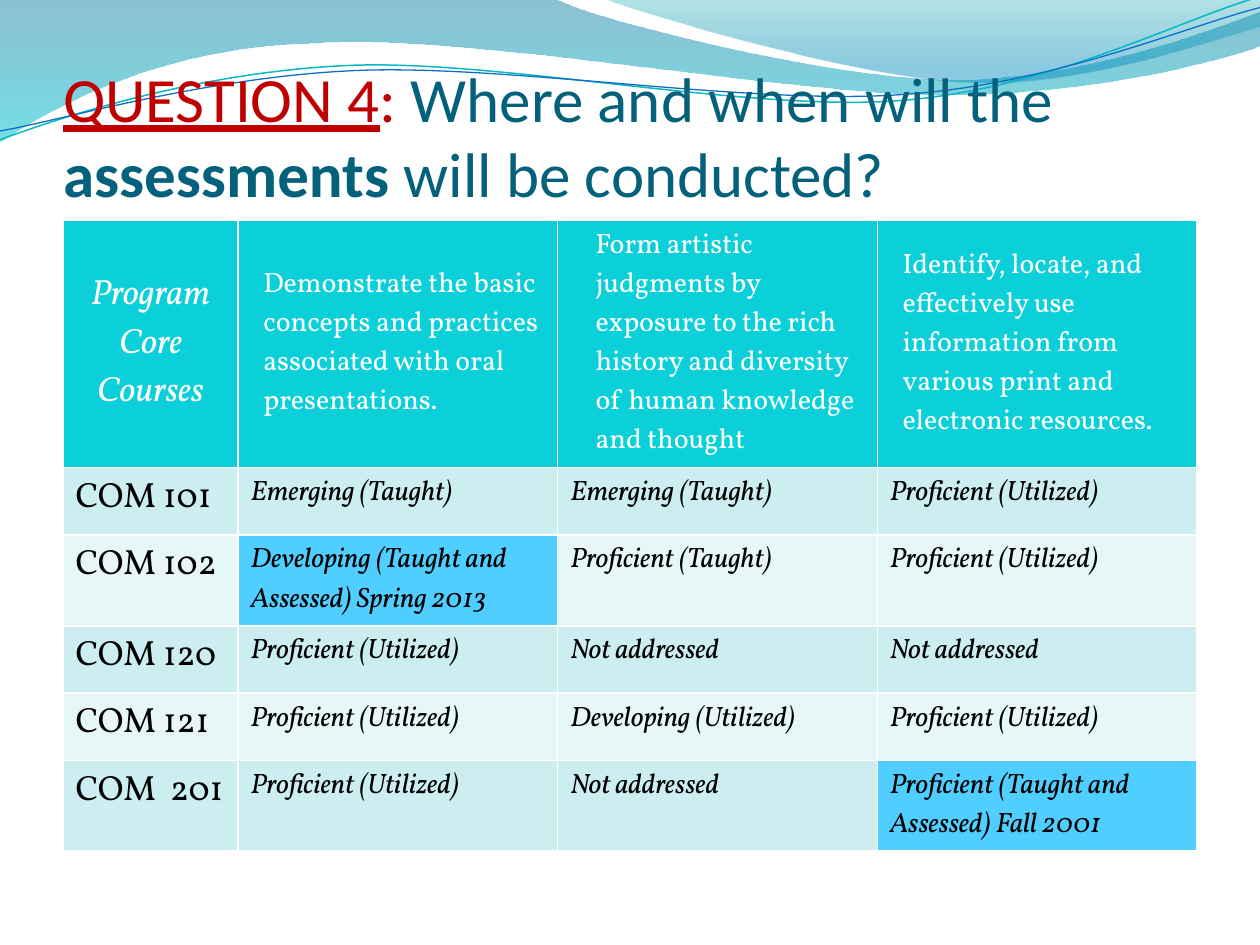
from lxml.etree import SubElement
from pptx import Presentation
from pptx.dml.color import RGBColor
from pptx.enum.text import MSO_ANCHOR, MSO_AUTO_SIZE, PP_ALIGN
from pptx.oxml.ns import qn
from pptx.util import Inches, Pt

COLORS = {
    "white": "FFFFFF", "black": "000000", "red": "C00000", "title": "04617B",
    "header": "0BD0D9", "odd": "CCEEF1", "even": "E7F7F8", "highlight": "4FCEFF",
    "wave_top": "0074A1", "wave_bottom": "00C6CF",
    "crest_top": "00A1A9", "crest_bottom": "008BBF",
    "teal_line": "0AB8BF", "blue_line": "0F6FC6",
}

TITLE_RUNS = [
    ("QUESTION 4", "red", True, False),
    (": ", "red", False, False),
    ("Where and when will the ", "title", False, False),
    ("assessments", "title", False, True),
    (" will be conducted?", "title", False, False),
]

HEADERS = [
    "Program Core Courses",
    "Demonstrate the basic concepts and practices associated with oral presentations.",
    "Form artistic judgments by exposure to the rich history and diversity of human knowledge and thought",
    "Identify, locate, and effectively use information from various print and electronic resources.",
]
COURSES = [
    ("COM 101", "Emerging (Taught)", "Emerging (Taught)", "Proficient (Utilized)"),
    ("COM 102", "Developing (Taught and Assessed) Spring 2013", "Proficient (Taught)", "Proficient (Utilized)"),
    ("COM 120", "Proficient (Utilized)", "Not addressed", "Not addressed"),
    ("COM 121", "Proficient (Utilized)", "Developing (Utilized)", "Proficient (Utilized)"),
    ("COM  201", "Proficient (Utilized)", "Not addressed", "Proficient (Taught and Assessed) Fall 2001"),
]
TABLE_WIDTH, COURSE_WIDTH = 9, 1.39
ROWS_HEIGHT, HEADER_HEIGHT, FRAME_HEIGHT = 4, 1.33, 4.84

BANDS = [
    {
        "path": [
            (0, 0), (4.4, -0.01),
            (4.76, 0.17, 6.64, 0.63, 7.58, 0.63), (8.53, 0.63, 9.58, 0.26, 10, 0.09),
            (10.01, 0.36),
            (9.83, 0.44, 8.7, 0.76, 7.46, 0.75), (6.22, 0.75, 3.82, 0.28, 2.57, 0.34),
            (1.29, 0.36, 0.46, 0.83, -0.01, 1.13), (0, 0),
        ],
        "stops": [("wave_top", 0, 45), ("wave_bottom", 1, 55)],
    },
    {
        "path": [
            (4.79, -0.01),
            (5.09, 0.11, 6.82, 0.62, 7.69, 0.65), (8.56, 0.69, 9.61, 0.32, 10, 0.21),
            (10, 0), (4.79, -0.01),
        ],
        "stops": [("crest_top", 0, 30), ("crest_bottom", 0.8, 45)],
    },
]
RIPPLES = [
    {
        "path": [
            (0, 1.11),
            (0.48, 0.93, 1.58, 0.57, 2.77, 0.52), (3.95, 0.47, 5.93, 0.89, 7.13, 0.8),
            (8.33, 0.71, 9.38, 0.15, 9.98, -0.02),
        ],
        "color": "teal_line", "width": 0.85,
    },
    {
        "path": [
            (0, 1.04),
            (0.47, 0.96, 1.64, 0.61, 2.83, 0.56), (4.03, 0.51, 5.97, 0.84, 7.17, 0.75),
            (8.36, 0.67, 9.41, 0.21, 10, 0.06),
        ],
        "color": "blue_line", "width": 0.75,
    },
]


def rgb(name):
    return RGBColor.from_string(COLORS[name])


def add_outline(slide, path, close):
    points = [(Inches(segment[-2]), Inches(segment[-1])) for segment in path]
    builder = slide.shapes.build_freeform(*points[0])
    builder.add_line_segments(points[1:], close=close)
    shape = builder.convert_to_shape()
    shape.shadow.inherit = False
    for line, segment in zip(list(shape.element.iter(qn("a:lnTo"))), path[1:]):
        if len(segment) == 6:
            line.tag = qn("a:cubicBezTo")
            for index, start in enumerate((0, 2)):
                point = line.makeelement(qn("a:pt"), {
                    "x": str(Inches(segment[start]) - shape.left),
                    "y": str(Inches(segment[start + 1]) - shape.top),
                })
                line.insert(index, point)
    return shape


def add_waves(slide):
    for band in BANDS:
        shape = add_outline(slide, band["path"], True)
        shape.line.fill.background()
        shape.fill.gradient()
        shape.fill.gradient_angle = 270
        for stop, (color, position, _) in zip(shape.fill.gradient_stops, band["stops"]):
            stop.color.rgb = rgb(color)
            stop.position = position
        for element, (_, _, opacity) in zip(shape.element.iter(qn("a:srgbClr")), band["stops"]):
            SubElement(element, qn("a:alpha"), val=str(opacity * 1000))
    for ripple in RIPPLES:
        shape = add_outline(slide, ripple["path"], False)
        shape.fill.background()
        shape.line.color.rgb = rgb(ripple["color"])
        shape.line.width = Pt(ripple["width"])


def add_run(paragraph, text, font, size, color, bold=False, italic=False):
    run = paragraph.add_run()
    run.text = text
    run.font.name = font
    run.font.size = Pt(size)
    run.font.color.rgb = rgb(color)
    run.font.bold = bold
    run.font.italic = italic
    return run


def format_title(slide):
    title = slide.shapes.title
    title.left, title.top, title.width, title.height = map(Inches, (0.5, 0.42, 9, 1.25))
    frame = title.text_frame
    frame.word_wrap = True
    frame.auto_size = MSO_AUTO_SIZE.NONE
    frame.vertical_anchor = MSO_ANCHOR.BOTTOM
    frame.margin_left = frame.margin_right = frame.margin_bottom = 0
    frame.margin_top = Inches(0.05)
    paragraph = frame.paragraphs[0]
    paragraph.alignment = PP_ALIGN.LEFT
    for text, color, underline, bold in TITLE_RUNS:
        add_run(paragraph, text, "Calibri", 36, color, bold).font.underline = underline
    slide.shapes.element.append(title.element)


def add_borders(cell):
    properties = cell._tc.get_or_add_tcPr()
    for side in ("lnL", "lnR", "lnT", "lnB"):
        border = SubElement(properties, qn(f"a:{side}"), w=str(Pt(1)))
        fill = SubElement(border, qn("a:solidFill"))
        SubElement(fill, qn("a:srgbClr"), val=COLORS["white"])


def add_course_table(slide):
    rows = [HEADERS] + COURSES
    graphic_frame = slide.shapes.add_table(
        len(rows), len(HEADERS), Inches(0.5), Inches(1.75),
        Inches(TABLE_WIDTH), Inches(ROWS_HEIGHT),
    )
    table = graphic_frame.table
    outcome_width = (TABLE_WIDTH - COURSE_WIDTH) / (len(HEADERS) - 1)
    for index, column in enumerate(table.columns):
        column.width = Inches(outcome_width if index else COURSE_WIDTH)
    course_height = (ROWS_HEIGHT - HEADER_HEIGHT) / len(COURSES)
    for index, row in enumerate(table.rows):
        row.height = Inches(course_height if index else HEADER_HEIGHT)
    graphic_frame.height = Inches(FRAME_HEIGHT)
    for row_index, texts in enumerate(rows):
        for column_index, text in enumerate(texts):
            cell = table.cell(row_index, column_index)
            is_header, is_course = row_index == 0, column_index == 0
            paragraph = cell.text_frame.paragraphs[0]
            add_borders(cell)
            fill = "odd" if row_index % 2 else "even"
            if is_header:
                fill = "header"
                cell.vertical_anchor = MSO_ANCHOR.MIDDLE
                if is_course:
                    paragraph.alignment = PP_ALIGN.CENTER
                else:
                    paragraph._p.get_or_add_pPr().set("marL", str(Inches(0.2)))
                if column_index % 2:
                    cell.margin_left = cell.margin_right = cell.margin_top = cell.margin_bottom = 0
            elif "Assessed" in text:
                fill = "highlight"
            cell.fill.solid()
            cell.fill.fore_color.rgb = rgb(fill)
            add_run(
                paragraph, text, "Vollkorn", 20 if is_course else 16,
                "white" if is_header else "black", italic=is_header == is_course,
            )


def main():
    presentation = Presentation()
    presentation.slide_width, presentation.slide_height = Inches(10), Inches(7.5)
    slide = presentation.slides.add_slide(presentation.slide_layouts[5])
    add_waves(slide)
    format_title(slide)
    add_course_table(slide)
    presentation.save("out.pptx")


if __name__ == "__main__":
    main()
